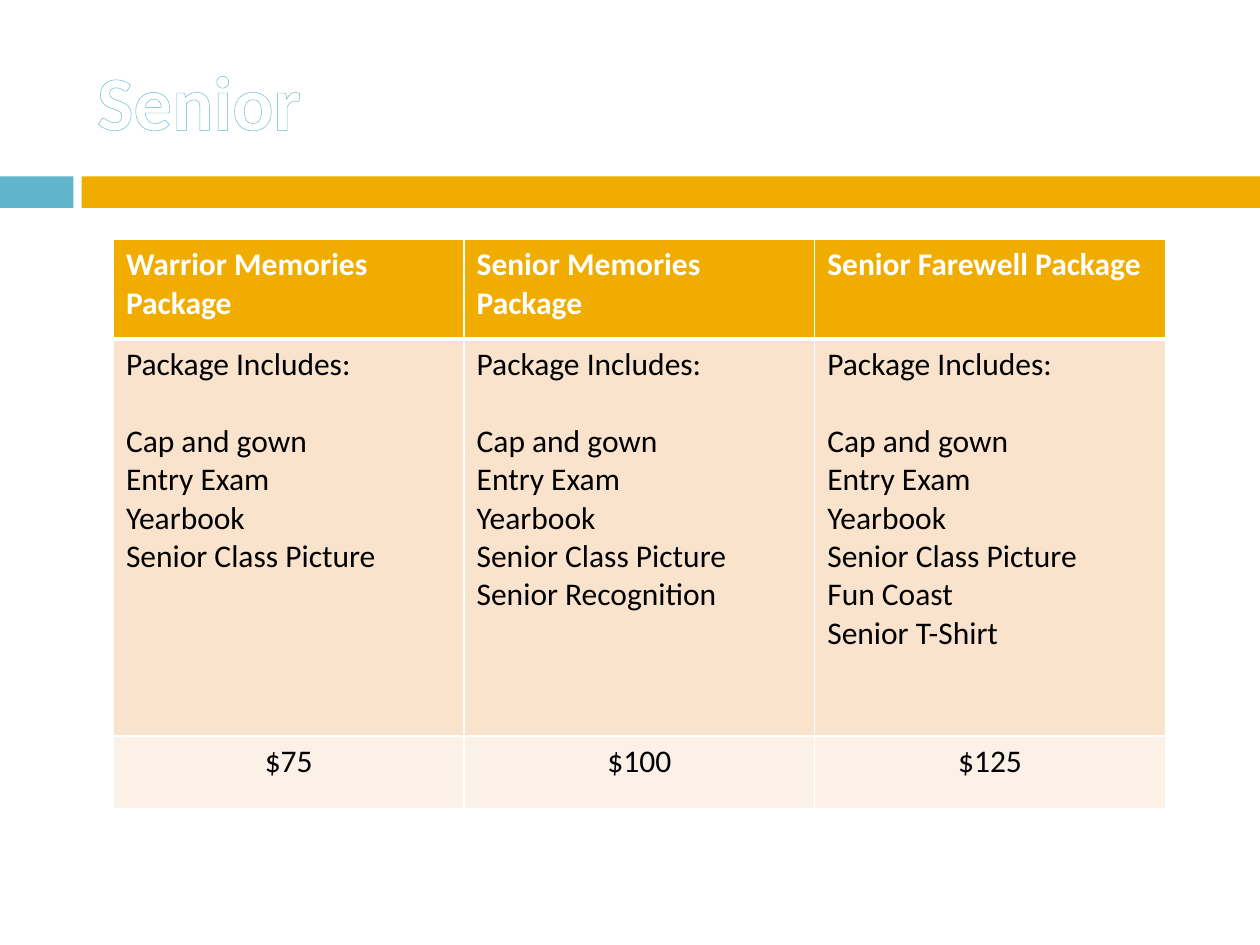
from lxml.etree import fromstring
from pptx import Presentation
from pptx.dml.color import RGBColor
from pptx.enum.shapes import MSO_SHAPE
from pptx.enum.text import MSO_ANCHOR, PP_ALIGN
from pptx.util import Inches, Pt

WHITE = RGBColor(0xFF, 0xFF, 0xFF)
BLACK = RGBColor(0, 0, 0)
GOLD = RGBColor(0xF0, 0xAD, 0x00)
TEAL = RGBColor(0x60, 0xB5, 0xCC)
PEACH = RGBColor(0xF9, 0xE3, 0xCC)
CREAM = RGBColor(0xFC, 0xF1, 0xE7)

TITLE_FONT = {"name": "Calibri", "size": Pt(44), "bold": True}
HEADER_FONT = {"name": "Calibri", "size": Pt(18), "bold": True}
BODY_FONT = {"name": "Calibri", "size": Pt(18), "bold": False}
BLANK_LINE = Pt(22)
DRAWING_NS = "http://schemas.openxmlformats.org/drawingml/2006/main"

COMMON_ITEMS = ["Cap and gown", "Entry Exam", "Yearbook", "Senior Class Picture"]
PACKAGES = [
    ("Warrior Memories Package", [], "$75"),
    ("Senior Memories Package", ["Senior Recognition"], "$100"),
    ("Senior Farewell Package", ["Fun Coast", "Senior T-Shirt"], "$125"),
]
ROW_HEIGHTS = [0.79, 3.15, 0.58]


def format_font(font, values, color):
    """Apply a dict of format values and a colour to a font."""
    for attribute, value in values.items():
        setattr(font, attribute, value)
    font.color.rgb = color


def solid_line(tag, width, color):
    """Return a solid line element with the given tag, width and colour."""
    return fromstring(
        f'<a:{tag} xmlns:a="{DRAWING_NS}" w="{int(width)}"><a:solidFill>'
        f'<a:srgbClr val="{color}"/></a:solidFill></a:{tag}>')


def add_band(slide, left, top, width, height):
    """Draw the teal tab and the gold bar across the given box."""
    tab, gap = 2.33 * height, 0.26 * height
    bar_left = left + tab + gap
    for x, part_width, color in (
        (left, tab, TEAL),
        (bar_left, left + width - bar_left, GOLD),
    ):
        part = slide.shapes.add_shape(
            MSO_SHAPE.RECTANGLE, int(x), top, int(part_width), height)
        part.shadow.inherit = False
        part.fill.solid()
        part.fill.fore_color.rgb = color
        part.line.fill.background()


def place_title(slide, heading, left, top, width, height):
    """Put the outlined heading into the title placeholder."""
    title = slide.shapes.title
    title.left, title.top, title.width, title.height = left, top, width, height
    title.text_frame.vertical_anchor = MSO_ANCHOR.MIDDLE
    paragraph = title.text_frame.paragraphs[0]
    paragraph.alignment = PP_ALIGN.LEFT
    run = paragraph.add_run()
    run.text = heading
    format_font(run.font, TITLE_FONT, WHITE)
    run.font._element.insert(0, solid_line("ln", Pt(0.52), TEAL))


def fill_cell(cell, lines, font_values, color, background, alignment):
    """Write the lines of one cell and set its look."""
    cell.fill.solid()
    cell.fill.fore_color.rgb = background
    cell.text = "\n".join(lines)
    for paragraph in cell.text_frame.paragraphs:
        paragraph.alignment = alignment
        format_font(paragraph.runs[0].font, font_values, color)


def add_packages(slide, left, top, width, height):
    """Build the table with one column for each package."""
    table = slide.shapes.add_table(
        len(ROW_HEIGHTS), len(PACKAGES), left, top, width, height).table
    for row, share in zip(table.rows, ROW_HEIGHTS):
        row.height = int(height * share / sum(ROW_HEIGHTS))
    for column, (package, extras, price) in enumerate(PACKAGES):
        header, contents, cost = (
            table.cell(row, column) for row in range(len(ROW_HEIGHTS)))
        fill_cell(header, [package], HEADER_FONT, WHITE, GOLD, PP_ALIGN.LEFT)
        header._tc.get_or_add_tcPr().insert(0, solid_line("lnB", Pt(3), WHITE))
        fill_cell(contents, ["Package Includes:", *COMMON_ITEMS, *extras],
                  BODY_FONT, BLACK, PEACH, PP_ALIGN.LEFT)
        contents.text_frame.paragraphs[0].space_after = BLANK_LINE
        fill_cell(cost, [price], BODY_FONT, BLACK, CREAM, PP_ALIGN.CENTER)


def main():
    """Build and save the senior packages slide."""
    deck = Presentation()
    deck.slide_width, deck.slide_height = Inches(10), Inches(7.5)
    slide = deck.slides.add_slide(deck.slide_layouts[5])
    add_band(slide, 0, Inches(1.4), deck.slide_width, Inches(0.25))
    place_title(slide, "Senior",
                Inches(0.67), Inches(0.25), Inches(8.92), Inches(1.08))
    add_packages(slide, Inches(0.9), Inches(1.9),
                 Inches(8.35), Inches(sum(ROW_HEIGHTS)))
    deck.save("out.pptx")


if __name__ == "__main__":
    main()
